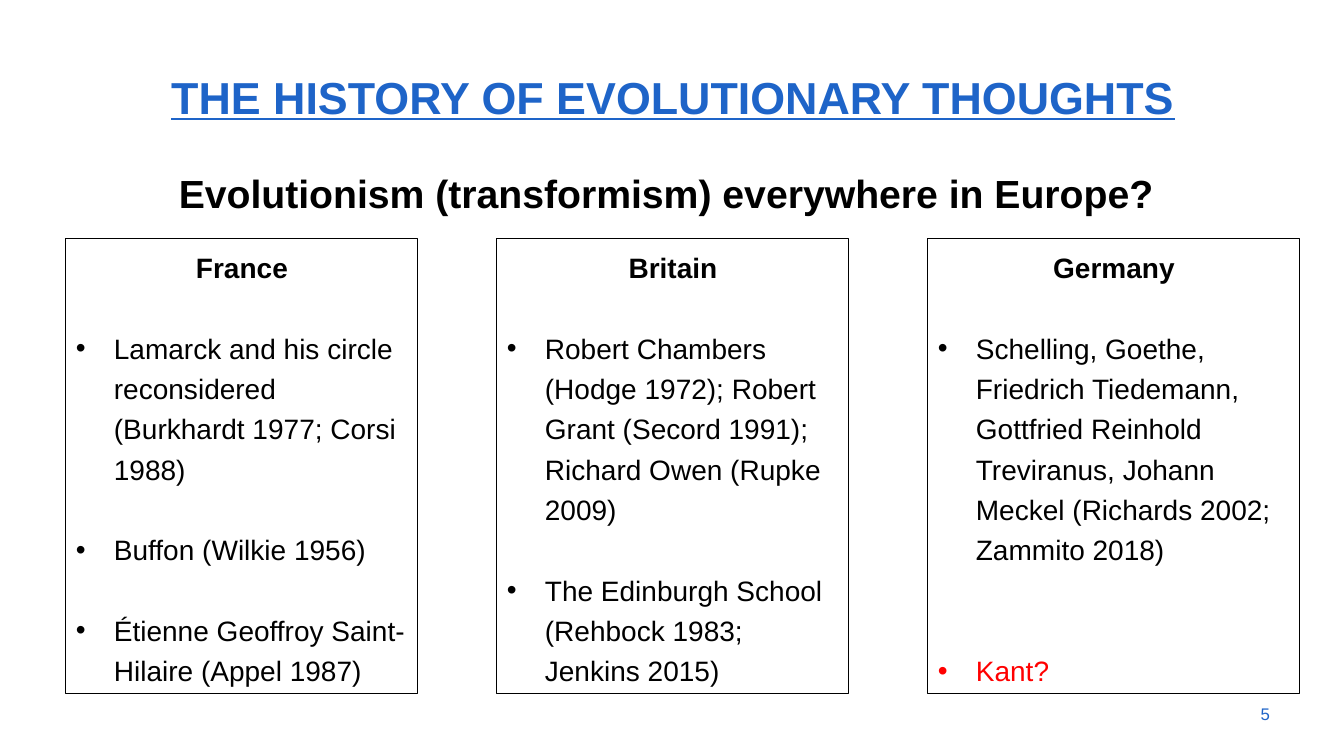
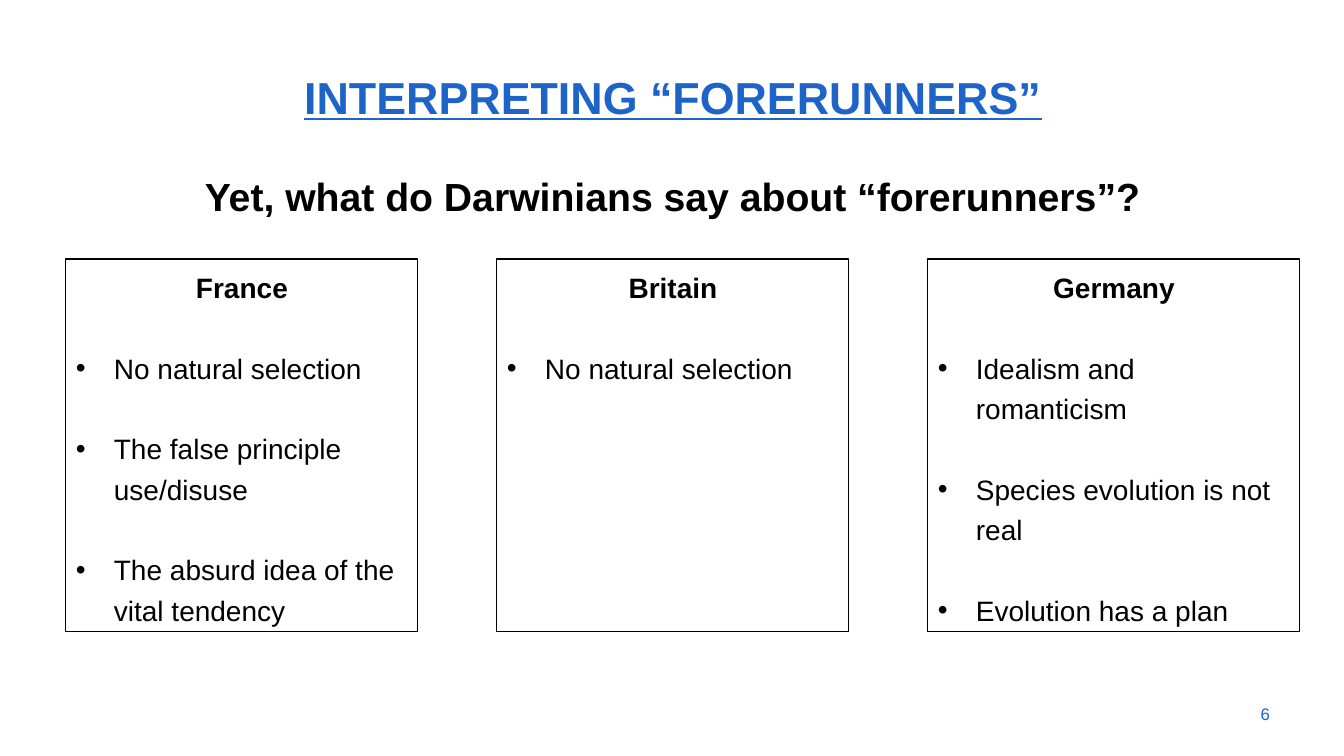
from dataclasses import dataclass

from lxml.etree import SubElement
from pptx import Presentation
from pptx.dml.color import RGBColor
from pptx.enum.shapes import MSO_SHAPE as Shape
from pptx.enum.text import MSO_ANCHOR as Anchor, MSO_AUTO_SIZE as AutoSize, PP_ALIGN as Align
from pptx.oxml.ns import qn
from pptx.util import Emu, Pt

COLORS = {"blue": "1E64C8", "black": "000000", "red": "FF0000", "white": "FFFFFF"}
FONT = "Arial"
EMU_PER_PX = 914400 / 100.8
LINE_SPACING = 1.2
BLANK_LINE = 28.8  # points, one line of 20 pt text
INDENT = 38

# Shared column grid
COLUMN_LEFT, COLUMN_STEP = 66, 431
COLUMN_WIDTHS = (352, 352, 372)


@dataclass(frozen=True)
class Frame:
    left: int
    top: int
    width: int
    height: int


@dataclass(frozen=True)
class Bullet:
    text: str
    color: str = "black"
    gap_lines: int = 1


@dataclass(frozen=True)
class Column:
    heading: str
    bullets: tuple[Bullet, ...]


@dataclass(frozen=True)
class Page:
    number: int
    title: str
    question: str
    question_frame: Frame
    columns_top: int
    columns_height: int
    columns: tuple[Column, ...]


TITLE_FRAME = Frame(64, 62, 1218, 67)
NUMBER_FRAME = Frame(1208, 694, 72, 40)

PAGES = (
    Page(5, "THE HISTORY OF EVOLUTIONARY THOUGHTS",
         "Evolutionism (transformism) everywhere in Europe? ",
         Frame(168, 155, 1007, 61), 239, 455, (
             Column("France", (
                 Bullet("Lamarck and his circle reconsidered (Burkhardt 1977; Corsi 1988)"),
                 Bullet("Buffon (Wilkie 1956)"),
                 Bullet("Étienne Geoffroy Saint-Hilaire (Appel 1987)"))),
             Column("Britain", (
                 Bullet("Robert Chambers (Hodge 1972); Robert Grant (Secord 1991); "
                        "Richard Owen (Rupke 2009)"),
                 Bullet("The Edinburgh School (Rehbock 1983; Jenkins 2015)"))),
             Column("Germany", (
                 Bullet("Schelling, Goethe, Friedrich Tiedemann, Gottfried Reinhold "
                        "Treviranus, Johann Meckel (Richards 2002; Zammito 2018)"),
                 Bullet("Kant?", "red", 2))))),
    Page(6, "INTERPRETING “FORERUNNERS”",
         "Yet, what do Darwinians say about “forerunners”?",
         Frame(180, 158, 985, 61), 259, 373, (
             Column("France", (
                 Bullet("No natural selection"),
                 Bullet("The false principle use/disuse"),
                 Bullet("The absurd idea of the vital tendency"))),
             Column("Britain", (Bullet("No natural selection"),)),
             Column("Germany", (
                 Bullet("Idealism and romanticism"),
                 Bullet("Species evolution is not real"),
                 Bullet("Evolution has a plan"))))),
)


def px(length: int) -> Emu:
    return Emu(round(length * EMU_PER_PX))


def place(box, frame: Frame) -> None:
    box.left, box.top = px(frame.left), px(frame.top)
    box.width, box.height = px(frame.width), px(frame.height)


def add_span(para, text: str, size: int, color: str, bold: bool = False,
             underline: bool = False) -> None:
    span = para.add_run()
    span.text = text
    span.font.name, span.font.size = FONT, Pt(size)
    span.font.bold, span.font.underline = bold, underline
    span.font.color.rgb = RGBColor.from_string(COLORS[color])


def prepare_text(box, anchor: Anchor):
    """Set wrapping and anchoring, and return the first paragraph."""
    frame = box.text_frame
    frame.word_wrap, frame.auto_size = True, AutoSize.NONE
    frame.vertical_anchor = anchor
    return frame.paragraphs[0]


def add_heading_box(slide, frame: Frame, text: str, size: int, outline: str):
    """Add an outlined rectangle that opens with a bold centred line."""
    box = slide.shapes.add_shape(Shape.RECTANGLE, 0, 0, 0, 0)
    place(box, frame)
    box.shadow.inherit = False
    box.fill.background()
    box.line.color.rgb = RGBColor.from_string(COLORS[outline])
    box.line.width = Pt(0.75)
    para = prepare_text(box, Anchor.TOP)
    para.alignment, para.line_spacing = Align.CENTER, LINE_SPACING
    add_span(para, text, size, "black", bold=True)
    return box


def add_bullet(box, bullet: Bullet) -> None:
    para = box.text_frame.add_paragraph()
    para.alignment, para.line_spacing = Align.LEFT, LINE_SPACING
    para.space_before = Pt(BLANK_LINE * bullet.gap_lines)
    properties = para._p.get_or_add_pPr()
    properties.set("marL", str(px(INDENT)))
    properties.set("indent", str(-px(INDENT)))
    SubElement(properties, qn("a:buFont")).set("typeface", FONT)
    SubElement(properties, qn("a:buChar")).set("char", "•")
    add_span(para, bullet.text, 20, bullet.color)


def add_title(slide, text: str) -> None:
    title = slide.shapes.title
    place(title, TITLE_FRAME)
    para = prepare_text(title, Anchor.BOTTOM)
    para.alignment, para.line_spacing = Align.CENTER, 0.9
    add_span(para, text, 32, "blue", bold=True, underline=True)


def add_page_number(slide, number: int) -> None:
    box = slide.shapes.add_textbox(0, 0, 0, 0)
    place(box, NUMBER_FRAME)
    para = prepare_text(box, Anchor.MIDDLE)
    para.alignment = Align.RIGHT
    add_span(para, str(number), 12, "blue")


def add_page(deck, page: Page) -> None:
    slide = deck.slides.add_slide(deck.slide_layouts.get_by_name("Title Only"))
    add_title(slide, page.title)
    add_page_number(slide, page.number)
    add_heading_box(slide, page.question_frame, page.question, 28, "white")
    # Country columns
    for index, (column, width) in enumerate(zip(page.columns, COLUMN_WIDTHS)):
        frame = Frame(COLUMN_LEFT + index * COLUMN_STEP, page.columns_top,
                      width, page.columns_height)
        box = add_heading_box(slide, frame, column.heading, 20, "black")
        for bullet in column.bullets:
            add_bullet(box, bullet)


def main() -> None:
    deck = Presentation()
    deck.slide_width, deck.slide_height = px(1344), px(756)
    for page in PAGES:
        add_page(deck, page)
    deck.save("out.pptx")


if __name__ == "__main__":
    main()
